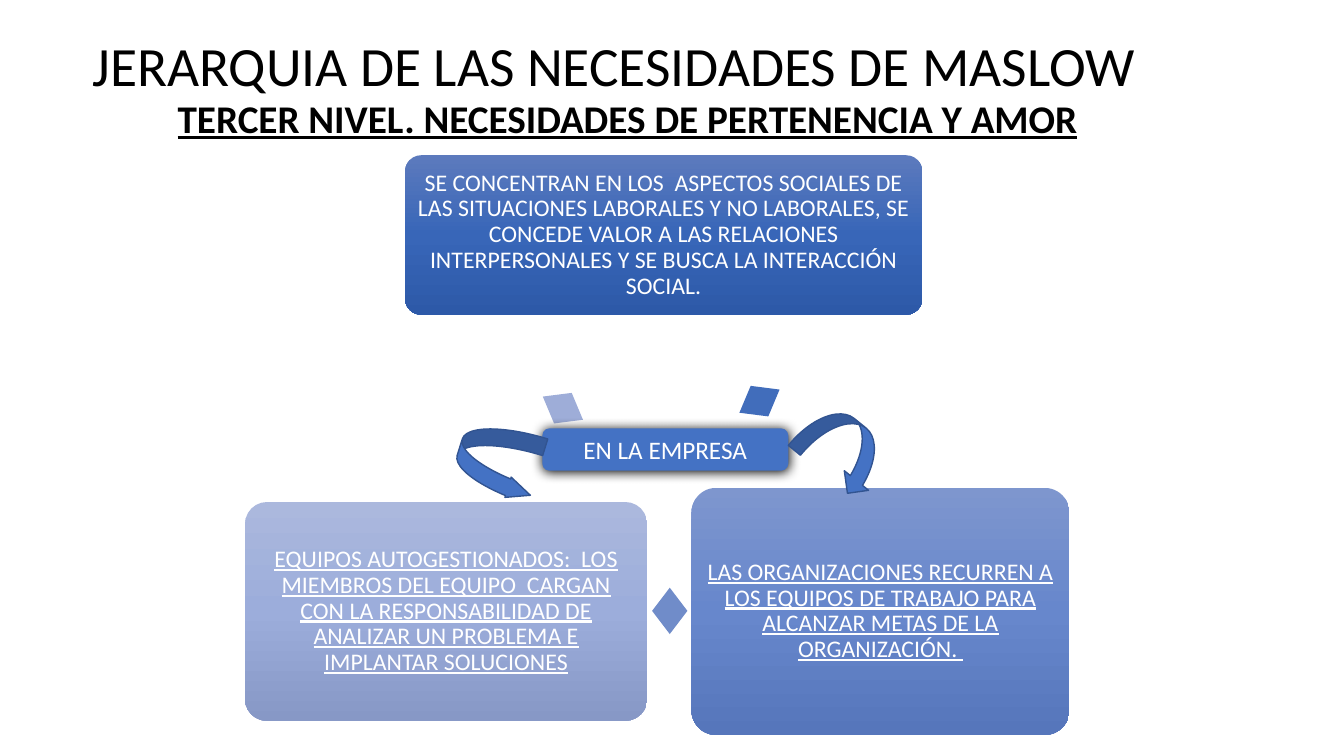
"""Build the slide on the third level of Maslow's hierarchy."""
from lxml import etree
from pptx import Presentation
from pptx.dml.color import RGBColor
from pptx.enum.shapes import MSO_SHAPE
from pptx.enum.text import MSO_ANCHOR, PP_ALIGN
from pptx.oxml import parse_xml
from pptx.oxml.ns import qn
from pptx.util import Pt

ROUND = MSO_SHAPE.ROUNDED_RECTANGLE
DOUBLE = MSO_SHAPE.LEFT_RIGHT_ARROW
LEFT_BEND = MSO_SHAPE.CURVED_LEFT_ARROW
RIGHT_BEND = MSO_SHAPE.CURVED_RIGHT_ARROW
MIDDLE, BOTTOM = MSO_ANCHOR.MIDDLE, MSO_ANCHOR.BOTTOM
LEFT, CENTER = PP_ALIGN.LEFT, PP_ALIGN.CENTER
SPACE = "http://schemas.openxmlformats.org/drawingml/2006/main"
FONT, BLACK, WHITE = "Calibri", "000000", "FFFFFF"
BLUE, EDGE = "4472C4", "325491"

HEADS = [
    ("JERARQUIA DE LAS NECESIDADES DE MASLOW",
     (66.2, 28.8, 828, 40.3), MIDDLE, LEFT, 39.6, False),
    ("TERCER NIVEL. NECESIDADES DE PERTENENCIA Y AMOR",
     (109.4, 69.1, 677.5, 32.4), BOTTOM, CENTER, 28, True),
]
CARDS = [
    ("SE CONCENTRAN EN LOS  ASPECTOS SOCIALES DE LAS SITUACIONES LABORALES "
     "Y NO LABORALES, SE CONCEDE VALOR A LAS RELACIONES INTERPERSONALES "
     "Y SE BUSCA LA INTERACCIÓN SOCIAL.",
     (289.4, 110.9, 369.4, 113.8), ("5C7ABD", "3866B8", "2D59A8"), False),
    ("LAS ORGANIZACIONES RECURREN A LOS EQUIPOS DE TRABAJO PARA ALCANZAR "
     "METAS DE LA ORGANIZACIÓN. ",
     (493.9, 348.5, 270, 176.4), ("7E96CE", "6787CC", "5676BB"), True),
    ("EQUIPOS AUTOGESTIONADOS:  LOS MIEMBROS DEL EQUIPO  CARGAN CON LA "
     "RESPONSABILIDAD DE ANALIZAR UN PROBLEMA E IMPLANTAR SOLUCIONES",
     (175, 358.6, 287.3, 156.2), ("ABB8DD", "9CADDB", "8798C6"), True),
]
LINKS = [(529.9, 270, 60, "416DBB"), (465.8, 419.8, 180, "708CC9"),
         (389.5, 275, 300, "9EADD8")]
LINK_SIZE = (25.2, 33.1)
PILL = ("EN LA EMPRESA", (387.4, 306, 175.7, 30.2))
BENDS = [
    (LEFT_BEND, (580.3, 288.7, 44.6, 65.5), 309, ()),
    (RIGHT_BEND, (326.9, 303.8, 58.3, 49.7), 17.2, (0.25, 0.305, 0.34)),
]


def color(code):
    return RGBColor.from_string(code)


def write(shape, text, size, ink=WHITE, anchor=MIDDLE, align=CENTER,
          inset=None, gap=0.9, bold=False, under=False):
    frame = shape.text_frame
    frame.word_wrap = True
    frame.vertical_anchor = anchor
    if inset is not None:
        frame.margin_left = frame.margin_right = Pt(inset)
        frame.margin_top = frame.margin_bottom = Pt(inset)
    para = frame.paragraphs[0]
    para.alignment, para.line_spacing = align, gap
    run = para.add_run()
    run.text = text
    font = run.font
    font.name, font.size, font.bold, font.underline = FONT, Pt(size), bold, under
    font.color.rgb = color(ink)


def draw(slide, kind, box, fill=None, turn=0, adjust=(), line=None):
    shape = slide.shapes.add_shape(kind, *map(Pt, box))
    shape.shadow.inherit = False
    shape.rotation = turn
    for i, value in enumerate(adjust):
        shape.adjustments[i] = value
    if fill:
        shape.fill.solid()
        shape.fill.fore_color.rgb = color(fill)
    if line:
        shape.line.color.rgb = color(line)
        shape.line.width = Pt(1)
    else:
        shape.line.fill.background()
    return shape


def shade(shape, tones):
    stops = "".join(f'<a:gs pos="{i * 50000}"><a:srgbClr val="{tone}"/></a:gs>'
                    for i, tone in enumerate(tones))
    grad = parse_xml(f'<a:gradFill xmlns:a="{SPACE}" rotWithShape="1">'
                     f'<a:gsLst>{stops}</a:gsLst>'
                     '<a:lin ang="5400000" scaled="0"/></a:gradFill>')
    shape.element.spPr.find(qn("a:prstGeom")).addnext(grad)


def glow(shape):
    effects = shape.element.spPr.find(qn("a:effectLst"))
    outer = etree.SubElement(effects, qn("a:outerShdw"), blurRad=str(Pt(8.5)),
                             dist=str(Pt(1)), dir="5400000", algn="ctr",
                             rotWithShape="0")
    etree.SubElement(outer, qn("a:srgbClr"), val=BLACK)


def main():
    deck = Presentation()
    deck.slide_width, deck.slide_height = Pt(960), Pt(540)
    slide = deck.slides.add_slide(deck.slide_layouts[6])
    for text, box, anchor, align, size, strong in HEADS:
        head = slide.shapes.add_textbox(*map(Pt, box))
        write(head, text, size, BLACK, anchor, align, 0,
              bold=strong, under=strong)
    for text, box, tones, under in CARDS:
        card = draw(slide, ROUND, box, adjust=(0.1,))
        shade(card, tones)
        write(card, text, 17, inset=5.1, under=under)
    for left, top, turn, fill in LINKS:
        draw(slide, DOUBLE, (left, top, *LINK_SIZE), fill, turn, (0.6, 0.5))
    text, box = PILL
    pill = draw(slide, ROUND, box, BLUE)
    glow(pill)
    write(pill, text, 18, gap=1.0)
    for kind, box, turn, adjust in BENDS:
        draw(slide, kind, box, BLUE, turn, adjust, EDGE)
    deck.save("out.pptx")


if __name__ == "__main__":
    main()
